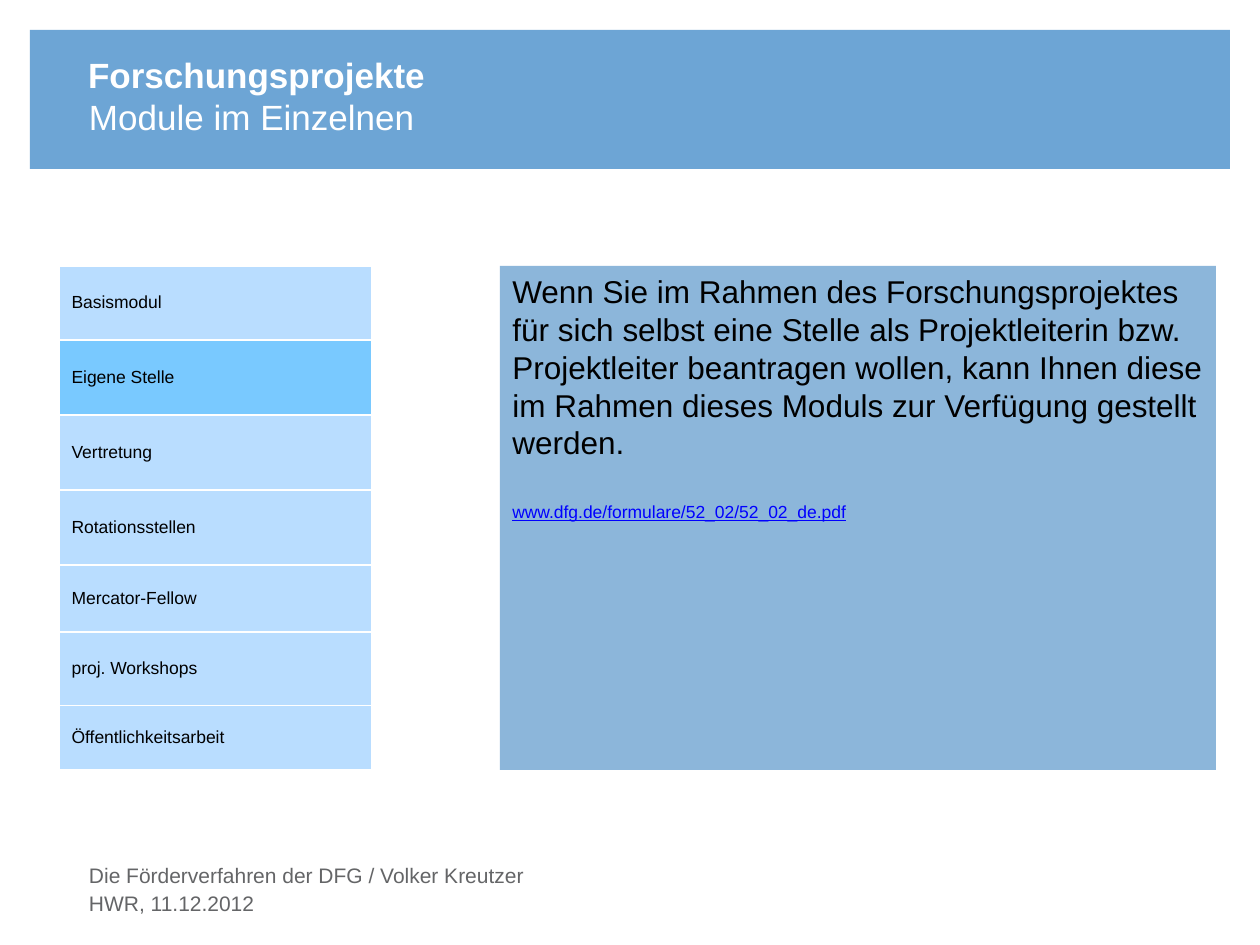
import pptx
import pptx.dml.color
import pptx.enum.shapes
import pptx.enum.text
import pptx.util

SCALE = 914400 / 126
ANCHOR = pptx.enum.text.MSO_ANCHOR


def px(*lengths):
    return [pptx.util.Emu(round(length * SCALE)) for length in lengths]


def style(target, color, size=None, bold=None):
    rgb = pptx.dml.color.RGBColor.from_string(color)
    if size is None:
        target.solid()
        target.fore_color.rgb = rgb
    else:
        target.name = "Arial"
        target.size = pptx.util.Pt(size)
        target.bold = bold
        target.color.rgb = rgb


presentation = pptx.Presentation()
presentation.slide_width, presentation.slide_height = px(1260, 945)
slide = presentation.slides.add_slide(presentation.slide_layouts[6])

panels = []
for box, color in [((30, 30, 1200, 139), "6DA5D5"), ((500, 266, 716, 504), "8CB6DA")]:
    shape = slide.shapes.add_shape(pptx.enum.shapes.MSO_SHAPE.RECTANGLE, *px(*box))
    shape.shadow.inherit = False
    shape.line.fill.background()
    style(shape.fill, color)
    panels.append(shape)

labels = [
    ("Forschungsprojekte", (88, 58, 1091, 38), ANCHOR.BOTTOM, 20, "FFFFFF", True),
    ("Module im Einzelnen", (89, 100, 1091, 38), ANCHOR.BOTTOM, 20, "FFFFFF", False),
    ("Die Förderverfahren der DFG / Volker Kreutzer", (89, 863, 876, 28), ANCHOR.TOP, 12, "646567", False),
    ("HWR, 11.12.2012", (89, 891, 876, 34), ANCHOR.TOP, 12, "646567", False),
]
for text, box, anchor, size, color, bold in labels:
    frame = slide.shapes.add_textbox(*px(*box)).text_frame
    frame.word_wrap = True
    frame.vertical_anchor = anchor
    frame.margin_left = frame.margin_right = frame.margin_top = frame.margin_bottom = 0
    frame.text = text
    style(frame.paragraphs[0].font, color, size, bold)

modules = [
    ("Basismodul", 74),
    ("Eigene Stelle", 75),
    ("Vertretung", 75),
    ("Rotationsstellen", 75),
    ("Mercator-Fellow", 67),
    ("proj. Workshops", 74),
    ("Öffentlichkeitsarbeit", 64),
]
table = slide.shapes.add_table(len(modules), 1, *px(59, 266, 313, 504)).table
table.first_row = table.horz_banding = False
for row, (module, height) in zip(table.rows, modules):
    row.height = px(height)[0]
    cell = row.cells[0]
    cell.text = module
    cell.vertical_anchor = ANCHOR.MIDDLE
    style(cell.fill, "79C9FF" if module == "Eigene Stelle" else "B9DDFF")
    style(cell.text_frame.paragraphs[0].font, "000000", 10)

frame = panels[1].text_frame
frame.word_wrap = True
frame.vertical_anchor = ANCHOR.TOP
frame.text = (
    "Wenn Sie im Rahmen des Forschungsprojektes für sich selbst eine Stelle "
    "als Projektleiterin bzw. Projektleiter beantragen wollen, kann Ihnen diese "
    "im Rahmen dieses Moduls zur Verfügung gestellt werden."
)
description = frame.paragraphs[0]
style(description.font, "000000", 18)
address = frame.add_paragraph()
address.text = "www.dfg.de/formulare/52_02/52_02_de.pdf"
address.space_before = pptx.util.Pt(23)
style(address.font, "0000FF", 10)
address.font.underline = True
for paragraph in frame.paragraphs:
    paragraph.alignment = pptx.enum.text.PP_ALIGN.LEFT

presentation.save("out.pptx")
